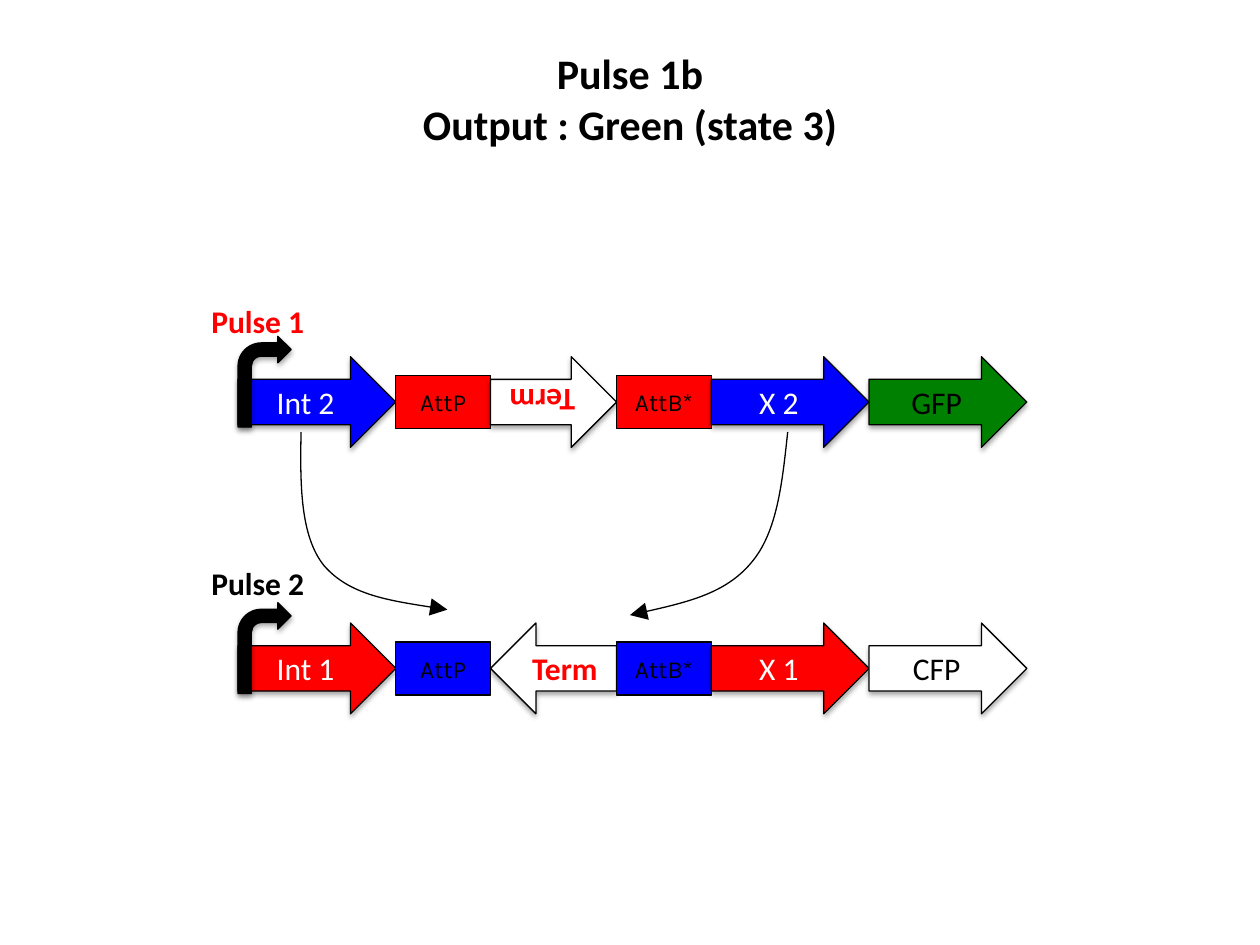
from dataclasses import dataclass

from lxml.etree import SubElement
from pptx import Presentation
from pptx.dml.color import RGBColor
from pptx.enum.shapes import MSO_SHAPE as SHAPE
from pptx.enum.text import MSO_ANCHOR as ANCHOR, MSO_AUTO_SIZE as AUTO, PP_ALIGN as ALIGN
from pptx.oxml.ns import qn
from pptx.util import Cm, Pt


@dataclass(frozen=True)
class Theme:
    black: str = "000000"
    white: str = "FFFFFF"
    red: str = "FF0000"
    blue: str = "0000FF"
    green: str = "008000"
    font: str = "Calibri"
    site_font: str = "Karla"
    title: int = 24
    body: int = 18
    site: int = 14
    line: float = 0.75


T = Theme()
GENE_W, SITE_W, TERM_W = 3.18, 1.91, 2.54
ARROW_H, SITE_H = 1.83, 1.07
PROMOTER_W, PROMOTER_RISE = 1.07, 0.41
LEFT, TOP, PITCH = 4.8, 7.19, 5.37


def write(p, text, color, size=T.body, font=T.font, bold=False, align=ALIGN.CENTER):
    p.text, p.alignment = text, align
    f = p.font
    f.name, f.size, f.bold = font, Pt(size), bold
    f.color.rgb = RGBColor.from_string(color)


def set_line(s):
    s.line.color.rgb = RGBColor.from_string(T.black)
    s.line.width = Pt(T.line)


def add_shadow(s):
    effects = s._element.spPr.find(qn("a:effectLst"))
    shadow = SubElement(effects, qn("a:outerShdw"), blurRad=str(Pt(3.1)),
                        dist=str(Pt(1.8)), dir="5400000", rotWithShape="0")
    color = SubElement(shadow, qn("a:srgbClr"), val=T.black)
    SubElement(color, qn("a:alpha"), val="35000")


def add_part(slide, kind, x, y, w, h, fill):
    s = slide.shapes.add_shape(kind, Cm(x), Cm(y), Cm(w), Cm(h))
    s.fill.solid()
    s.fill.fore_color.rgb = RGBColor.from_string(fill)
    set_line(s)
    s.shadow.inherit = False
    if kind != SHAPE.RECTANGLE:
        add_shadow(s)
    s.text_frame.vertical_anchor = ANCHOR.MIDDLE
    return s


def add_arrow(slide, x, y, w, text, fill, color, bold=False):
    s = add_part(slide, SHAPE.RIGHT_ARROW, x, y, w, ARROW_H, fill)
    s.text_frame.word_wrap = True
    write(s.text_frame.paragraphs[0], text, color, bold=bold)
    return s


def add_site(slide, x, y, text, fill):
    """Attachment site, centred on the height of the arrows."""
    s = add_part(slide, SHAPE.RECTANGLE, x, y + (ARROW_H - SITE_H) / 2, SITE_W, SITE_H, fill)
    s.text_frame.word_wrap = False
    write(s.text_frame.paragraphs[0], text, T.black, T.site, T.site_font)


def add_terminator(slide, x, y, inverted):
    """Mirrored arrow; inverted turns it, with its text, upside down."""
    s = add_arrow(slide, x, y, TERM_W, "Term", T.white, T.red, bold=True)
    s._element.spPr.xfrm.set("flipH", "1")
    s.rotation = 180 if inverted else 0


def add_label(slide, x, y, text, color):
    s = slide.shapes.add_textbox(Cm(x), Cm(y), Cm(2.46), Cm(1.02))
    s.text_frame.word_wrap = False
    s.text_frame.auto_size = AUTO.SHAPE_TO_FIT_TEXT
    write(s.text_frame.paragraphs[0], text, color, bold=True, align=ALIGN.LEFT)


def add_construct(slide, x, y, row):
    add_label(slide, x - 0.79, y - row["label_rise"], row["label"], row["label_color"])
    int_name, x_name = row["genes"]
    reporter, reporter_fill = row["reporter"]
    site_fill, gene_fill = row["site_fill"], row["gene_fill"]
    parts = (
        (GENE_W, add_arrow, (GENE_W, int_name, gene_fill, T.white)),
        (SITE_W, add_site, ("AttP", site_fill)),
        (TERM_W, add_terminator, (row["inverted"],)),
        (SITE_W, add_site, ("AttB*", site_fill)),
        (GENE_W, add_arrow, (GENE_W, x_name, gene_fill, T.white)),
        (GENE_W, add_arrow, (GENE_W, reporter, reporter_fill, T.black)),
    )
    left = x
    for width, add, args in parts:
        add(slide, left, y, *args)
        left += width
    add_part(slide, SHAPE.BENT_ARROW, x, y - PROMOTER_RISE, PROMOTER_W, ARROW_H, T.black)


def add_curve(slide, x, y, points):
    """Curved arrow from a start point and groups of three Bezier points."""
    start, *rest = [(Cm(x + dx), Cm(y + dy)) for dx, dy in points]
    builder = slide.shapes.build_freeform(*start)
    builder.add_line_segments(rest, close=False)
    s = builder.convert_to_shape()
    s.fill.background()
    set_line(s)
    s.shadow.inherit = False
    outline = s._element.spPr.find(".//" + qn("a:path"))
    segments = outline.findall(qn("a:lnTo"))
    for i in range(0, len(segments), 3):
        bezier = SubElement(outline, qn("a:cubicBezTo"))
        for segment in segments[i:i + 3]:
            bezier.append(segment[0])
            outline.remove(segment)
    ln = s._element.spPr.find(qn("a:ln"))
    SubElement(ln, qn("a:tailEnd"), type="triangle", w="lg", len="lg")


def add_title(slide, x, y, w, h, lines):
    s = slide.shapes.title
    s.left, s.top, s.width, s.height = Cm(x), Cm(y), Cm(w), Cm(h)
    tf = s.text_frame
    tf.vertical_anchor = ANCHOR.TOP
    for i, line in enumerate(lines):
        p = tf.add_paragraph() if i else tf.paragraphs[0]
        write(p, line, T.black, T.title, bold=True)


CONSTRUCTS = (
    dict(label="Pulse 1", label_color=T.red, label_rise=1.22, genes=("Int 2", "X 2"),
         gene_fill=T.blue, site_fill=T.red, inverted=True, reporter=("GFP", T.green)),
    dict(label="Pulse 2", label_color=T.black, label_rise=1.32, genes=("Int 1", "X 1"),
         gene_fill=T.red, site_fill=T.blue, inverted=False, reporter=("CFP", T.white)),
)
CURVES = (
    ((1.27, 1.52), (1.25, 2.56), (1.25, 3.61), (1.73, 4.21),
     (2.24, 4.8), (3.23, 4.95), (4.22, 5.1)),
    ((11.08, 1.52), (10.97, 2.54), (10.87, 3.55), (10.34, 4.16),
     (9.83, 4.77), (8.87, 5), (7.9, 5.21)),
)


def main():
    prs = Presentation()
    prs.slide_width, prs.slide_height = Cm(25.4), Cm(19.05)
    slide = prs.slides.add_slide(prs.slide_layouts[5])
    add_title(slide, 0, 0.84, 25.4, 2.31, ("Pulse 1b", "Output : Green (state 3)"))
    for i, row in enumerate(CONSTRUCTS):
        add_construct(slide, LEFT, TOP + i * PITCH, row)
    for points in CURVES:
        add_curve(slide, LEFT, TOP, points)
    prs.save("out.pptx")


if __name__ == "__main__":
    main()
